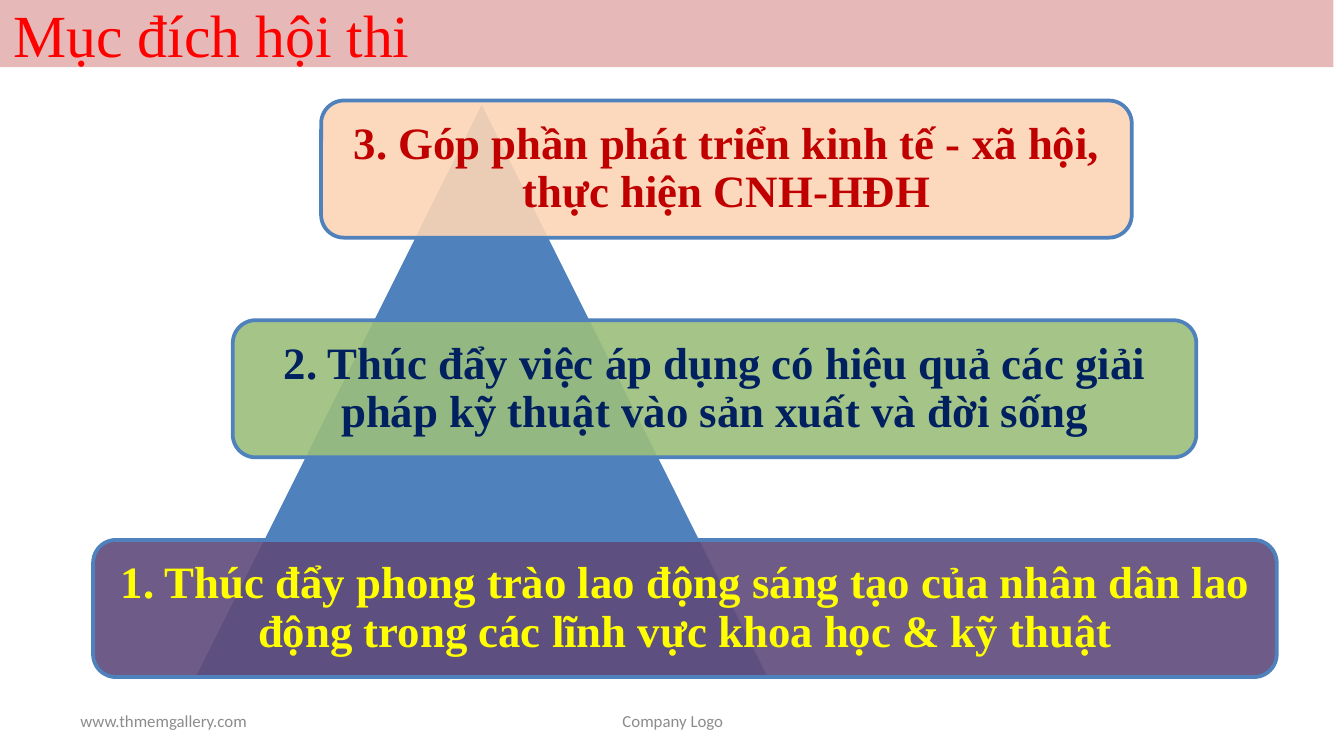
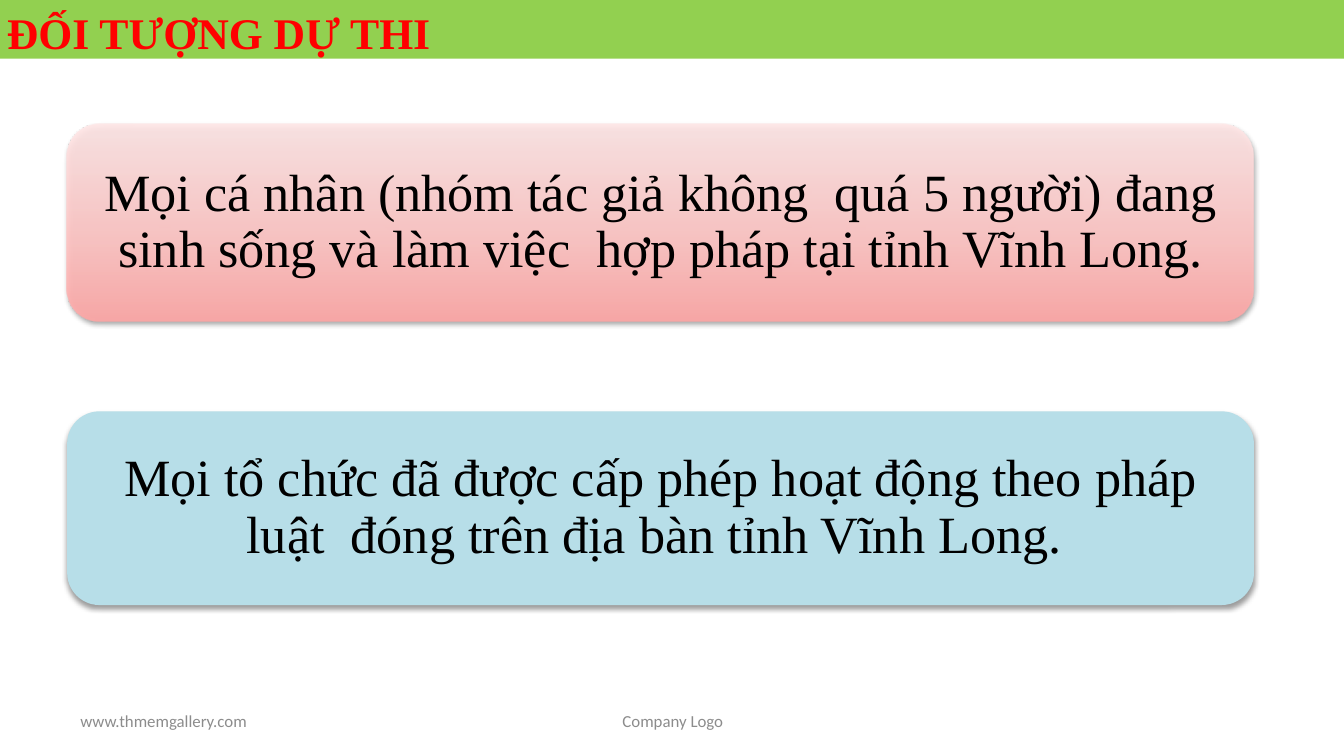
from pptx import Presentation
from pptx.dml.color import RGBColor
from pptx.enum.shapes import MSO_SHAPE
from pptx.enum.text import MSO_ANCHOR, MSO_AUTO_SIZE, PP_ALIGN
from pptx.oxml.ns import qn
from pptx.util import Cm, Pt
from lxml import etree

ROUND, TRIANGLE = MSO_SHAPE.ROUNDED_RECTANGLE, MSO_SHAPE.ISOSCELES_TRIANGLE
LEFT, CENTER = PP_ALIGN.LEFT, PP_ALIGN.CENTER
MIDDLE, BOTTOM = MSO_ANCHOR.MIDDLE, MSO_ANCHOR.BOTTOM
NO_FIT = MSO_AUTO_SIZE.NONE

SERIF, SANS = "Times New Roman", "Calibri"
COLORS = {
    "red": "FF0000", "pink": "E6B9B8", "lime": "92D050", "blue": "4F81BD",
    "white": "FFFFFF", "black": "000000", "gray": "8C8C8C",
    "peach": "FCD5B5", "green": "9BBF7B", "purple": "604A7B",
    "dark red": "C00000", "navy": "002060", "yellow": "FFFF00",
    "sky": "B7DEE8", "rose": "FFA6A5", "light rose": "FFC0BF",
    "pale rose": "FFE7E7",
}

# Content: all lengths in centimetres
PURPOSE_TITLE = {
    "text": "Mục đích hội thi", "band": "pink", "box": (0, 0, 25.2, 1.27),
    "insets": (0.25, 0.13), "anchor": MIDDLE,
    "font": {"size": Pt(32), "bold": False},
}
ENTRANTS_TITLE = {
    "text": "ĐỐI TƯỢNG DỰ THI", "band": "lime", "box": (0, 0, 25.4, 1.11),
    "insets": (0.13, 0), "anchor": BOTTOM,
    "font": {"size": Pt(23.4), "bold": True},
}
# text, left, width, fill, text colour; top of the pyramid first
PURPOSES = [
    ("3. Góp phần phát triển kinh tế - xã hội, thực hiện CNH-HĐH",
     6.07, 15.32, "peach", "dark red"),
    ("2. Thúc đẩy việc áp dụng có hiệu quả các giải pháp kỹ thuật vào sản "
     "xuất và đời sống", 4.4, 18.21, "green", "navy"),
    ("1. Thúc đẩy phong trào lao động sáng tạo của nhân dân lao động trong "
     "các lĩnh vực khoa học & kỹ thuật", 1.76, 22.37, "purple", "yellow"),
]
# text, top, height, fill (one colour, or gradient stops from the bottom up)
ENTRANTS = [
    ("Mọi cá nhân (nhóm tác giả không  quá 5 người) đang sinh sống và làm "
     "việc  hợp pháp tại tỉnh Vĩnh Long.", 2.34, 3.73,
     [(0, "rose"), (35, "light rose"), (100, "pale rose")]),
    ("Mọi tổ chức đã được cấp phép hoạt động theo pháp luật  đóng trên địa "
     "bàn tỉnh Vĩnh Long. ", 7.77, 3.66, "sky"),
]
FOOTERS = [  # text, left, width, alignment
    ("www.thmemgallery.com", 1.27, 5.92, LEFT),
    ("Company Logo", 8.69, 8.05, CENTER),
]
FOOTER_TOP, FOOTER_HEIGHT = 13.23, 0.76
PYRAMID = (3.63, 1.9, 10.95, 10.95)
PURPOSE_TOP, PURPOSE_HEIGHT, PURPOSE_PITCH = 1.9, 2.59, 4.15
ENTRANT_LEFT, ENTRANT_WIDTH = 1.27, 22.43
OPACITY = 90


def rgb(name):
    return RGBColor.from_string(COLORS[name])


def add_xml(parent, tag, **values):
    return etree.SubElement(parent, qn(tag), {k: str(v) for k, v in values.items()})


def set_alpha(color, percent):
    add_xml(color, "a:alpha", val=percent * 1000)


def write(shape, text, color, font, align, anchor=MIDDLE, insets=(0.25, 0.13),
          spacing=1.0):
    frame = shape.text_frame
    side, edge = map(Cm, insets)
    frame_format = {
        "word_wrap": True, "auto_size": NO_FIT, "vertical_anchor": anchor,
        "margin_left": side, "margin_right": side,
        "margin_top": edge, "margin_bottom": edge,
    }
    for name, value in frame_format.items():
        setattr(frame, name, value)
    paragraph = frame.paragraphs[0]
    paragraph.alignment, paragraph.line_spacing = align, spacing
    run = paragraph.add_run()
    run.text = text
    for name, value in font.items():
        setattr(run.font, name, value)
    run.font.color.rgb = rgb(color)


def add_panel(slide, kind, box, fill, line=None):
    panel = slide.shapes.add_shape(kind, *map(Cm, box))
    panel.shadow.inherit = False
    panel.fill.solid()
    panel.fill.fore_color.rgb = rgb(fill)
    if line:
        panel.line.color.rgb = rgb(line)
        panel.line.width = Pt(2)
    else:
        panel.line.fill.background()
    return panel


def fill_upward(panel, stops):
    """Replace the solid fill by a translucent gradient rising from the bottom."""
    properties = panel._element.spPr
    solid = properties.find(qn("a:solidFill"))
    gradient = etree.Element(qn("a:gradFill"), rotWithShape="1")
    stop_list = add_xml(gradient, "a:gsLst")
    for position, color in stops:
        stop = add_xml(stop_list, "a:gs", pos=position * 1000)
        set_alpha(add_xml(stop, "a:srgbClr", val=COLORS[color]), OPACITY)
    add_xml(gradient, "a:lin", ang=270 * 60000, scaled=1)
    properties.replace(solid, gradient)


def drop_shadow(panel):
    effects = panel._element.spPr.find(qn("a:effectLst"))
    shadow = add_xml(effects, "a:outerShdw", blurRad=Pt(3.1), dist=Pt(1.6),
                     dir=90 * 60000, rotWithShape=0)
    set_alpha(add_xml(shadow, "a:srgbClr", val=COLORS["black"]), 38)


def start_slide(deck, heading):
    """Add a slide with its title band and footers."""
    slide = deck.slides.add_slide(deck.slide_layouts[5])
    title = slide.shapes.title
    title.left, title.top, title.width, title.height = map(Cm, heading["box"])
    title.fill.solid()
    title.fill.fore_color.rgb = rgb(heading["band"])
    write(title, heading["text"], "red", {"name": SERIF, **heading["font"]},
          LEFT, heading["anchor"], heading["insets"])
    for text, left, width, align in FOOTERS:
        footer = slide.shapes.add_textbox(
            Cm(left), Cm(FOOTER_TOP), Cm(width), Cm(FOOTER_HEIGHT))
        write(footer, text, "gray", {"name": SANS, "size": Pt(9)}, align)
    return slide


def add_purposes(deck):
    slide = start_slide(deck, PURPOSE_TITLE)
    add_panel(slide, TRIANGLE, PYRAMID, "blue", "white")
    font = {"name": SERIF, "size": Pt(24), "bold": True}
    for row, (text, left, width, fill, color) in enumerate(PURPOSES):
        top = PURPOSE_TOP + row * PURPOSE_PITCH
        purpose = add_panel(slide, ROUND, (left, top, width, PURPOSE_HEIGHT),
                            fill, "blue")
        set_alpha(purpose._element.spPr.find(qn("a:solidFill"))[0], OPACITY)
        write(purpose, text, color, font, CENTER, insets=(0.25, 0.25), spacing=0.9)


def add_entrants(deck):
    slide = start_slide(deck, ENTRANTS_TITLE)
    font = {"name": SERIF, "size": Pt(28)}
    for text, top, height, fill in ENTRANTS:
        graded = isinstance(fill, list)
        entrant = add_panel(slide, ROUND, (ENTRANT_LEFT, top, ENTRANT_WIDTH, height),
                            fill[0][1] if graded else fill)
        if graded:
            fill_upward(entrant, fill)
        drop_shadow(entrant)
        write(entrant, text, "black", font, CENTER, insets=(0.3, 0.3), spacing=0.9)


def main():
    deck = Presentation()
    deck.slide_width, deck.slide_height = Cm(25.4), Cm(14.28)
    add_purposes(deck)
    add_entrants(deck)
    deck.save("out.pptx")


if __name__ == "__main__":
    main()
